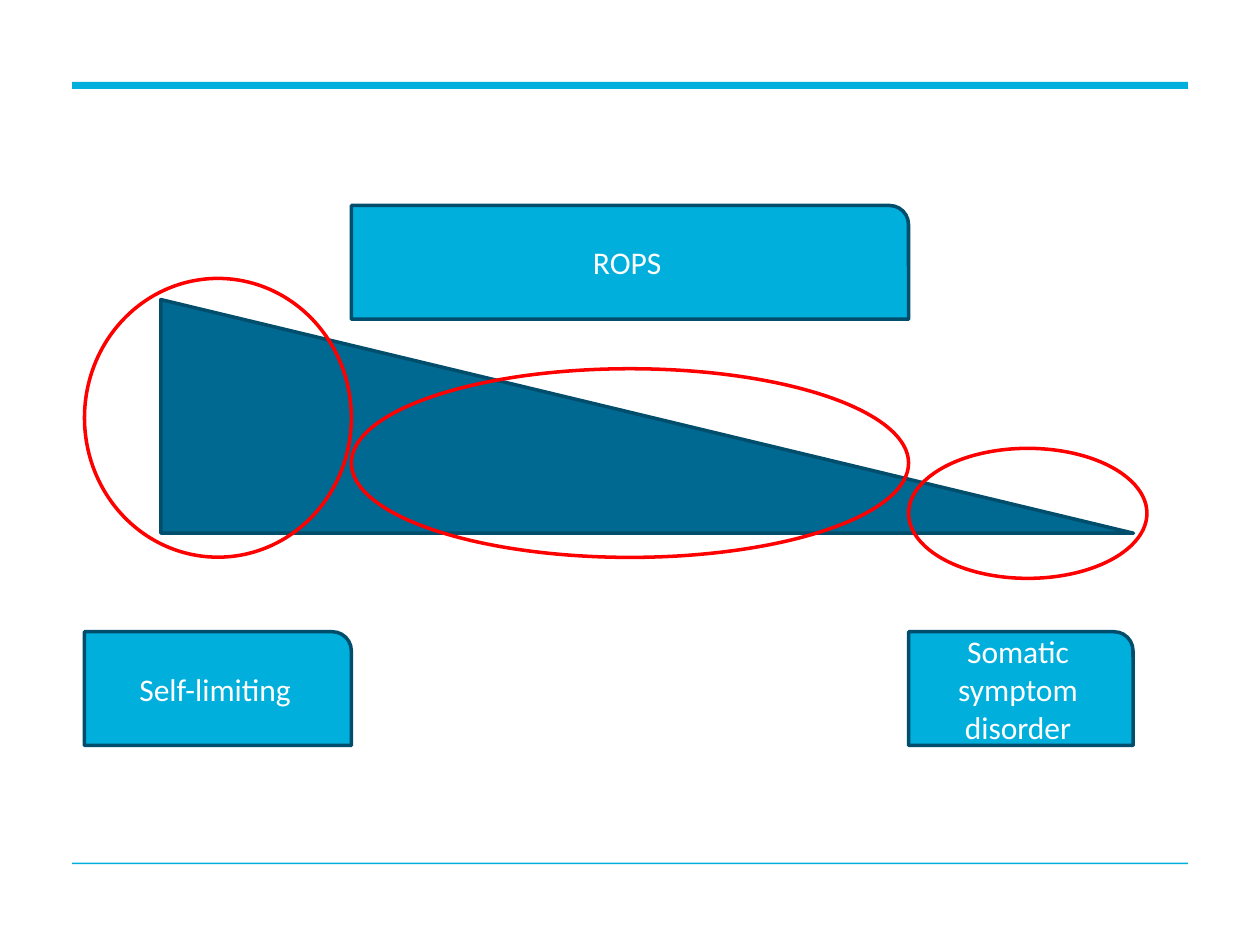
from pptx import Presentation
from pptx.dml.color import RGBColor
from pptx.enum.shapes import MSO_SHAPE
from pptx.enum.text import MSO_ANCHOR, PP_ALIGN
from pptx.util import Pt

CYAN, BLUE, NAVY, RED, WHITE = "00AFDC", "006991", "004E6B", "FF0000", "FFFFFF"


def tint(code):
    return RGBColor.from_string(code)


class Deck:
    font = "Calibri"
    size = 18
    weight = 2

    def __init__(self, wide, high):
        self.show = Presentation()
        self.show.slide_width, self.show.slide_height = Pt(wide), Pt(high)
        self.slide = self.show.slides.add_slide(self.show.slide_layouts[6])

    def shape(self, kind, x, y, w, h, fill=None, line=None):
        item = self.slide.shapes.add_shape(kind, Pt(x), Pt(y), Pt(w), Pt(h))
        item.shadow.inherit = False
        if fill:
            item.fill.solid()
            item.fill.fore_color.rgb = tint(fill)
        else:
            item.fill.background()
        if line:
            item.line.color.rgb = tint(line)
            item.line.width = Pt(self.weight)
        else:
            item.line.fill.background()
        return item

    def rule(self, y, h):
        self.shape(MSO_SHAPE.RECTANGLE, 41.15, y, 637.7, h, CYAN)

    def wedge(self, x, y, w, h):
        self.shape(MSO_SHAPE.RIGHT_TRIANGLE, x, y, w, h, BLUE, NAVY)

    def ring(self, x, y, w, h):
        self.shape(MSO_SHAPE.OVAL, x, y, w, h, line=RED)

    def label(self, text, x, y, w, h=65):
        item = self.shape(MSO_SHAPE.ROUND_1_RECTANGLE, x, y, w, h, CYAN, NAVY)
        frame = item.text_frame
        frame.word_wrap = True
        frame.vertical_anchor = MSO_ANCHOR.MIDDLE
        para = frame.paragraphs[0]
        para.alignment = PP_ALIGN.CENTER
        run = para.add_run()
        run.text = text
        run.font.name = self.font
        run.font.size = Pt(self.size)
        run.font.color.rgb = tint(WHITE)


def main():
    deck = Deck(720, 540)
    deck.rule(46.8, 4)
    deck.rule(493, 0.9)
    deck.wedge(91.9, 171.2, 555.8, 133.5)

    left, mid, right, end = 48.3, 200.8, 519.2, 647.5
    low = 361
    stages = [
        ("Self-limiting", left, mid, low, (159.1, 152.5, 159.3)),
        ("ROPS", mid, right, 117.4, (210.7, 318.4, 107.8)),
        ("Somatic symptom disorder", right, end, low, (256.2, 136.2, 74.3)),
    ]
    for text, start, stop, top, (y, w, h) in stages:
        deck.ring(start, y, w, h)
        deck.label(text, start, top, stop - start)

    deck.show.save("out.pptx")


if __name__ == "__main__":
    main()
